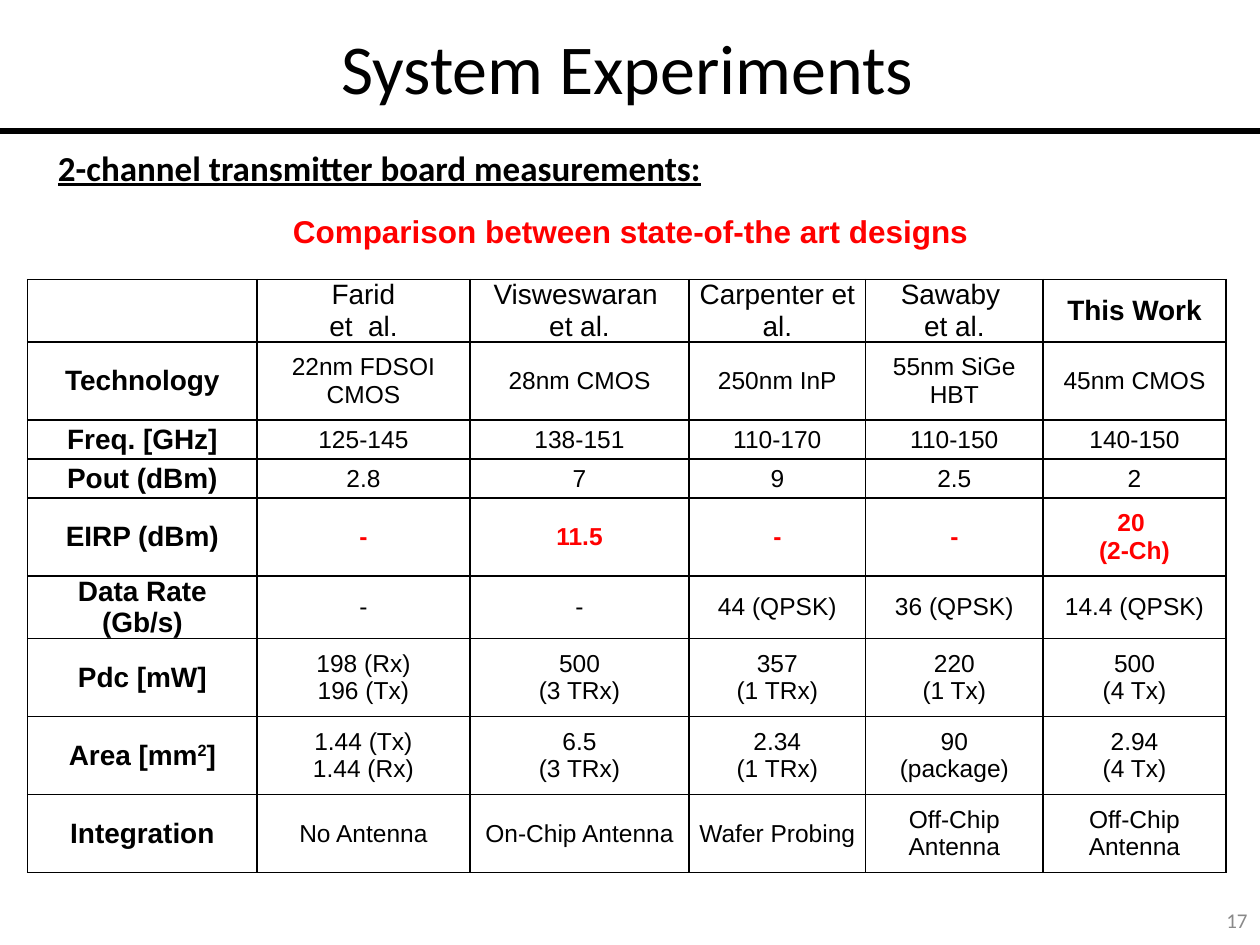
from dataclasses import dataclass

import pptx
import pptx.dml.color
import pptx.enum.shapes
import pptx.enum.text
import pptx.oxml.ns
import pptx.util
from lxml import etree

Inches = pptx.util.Inches
Pt = pptx.util.Pt
RGB = pptx.dml.color.RGBColor
ALIGN = pptx.enum.text.PP_ALIGN
MIDDLE = pptx.enum.text.MSO_ANCHOR.MIDDLE
qn = pptx.oxml.ns.qn


@dataclass(frozen=True)
class Theme:
    ink: RGB = RGB(0, 0, 0)
    accent: RGB = RGB(255, 0, 0)
    muted: RGB = RGB(0x89, 0x89, 0x89)
    heading_font: str = "Calibri"
    table_font: str = "Arial"
    title_size: int = 40
    section_size: int = 20
    caption_size: int = 18
    label_size: int = 16
    value_size: int = 14
    number_size: int = 12
    rule_width: int = 3
    border_width: int = 1


THEME = Theme()

COLUMN_WIDTHS = [1.82, 1.69, 1.74, 1.4, 1.41, 1.45]
ROW_HEIGHTS = [0.49, 0.62, 0.31, 0.31, 0.62, 0.49, 0.62, 0.62, 0.62]
EMPHASIS_ROW = "EIRP (dBm)"
DESIGNS = [
    ["", "Farid\net  al.", "Visweswaran \net al.", "Carpenter et al.", "Sawaby \net al.", "This Work"],
    ["Technology", "22nm FDSOI CMOS", "28nm CMOS", "250nm InP", "55nm SiGe HBT", "45nm CMOS"],
    ["Freq. [GHz]", "125-145", "138-151", "110-170", "110-150", "140-150"],
    ["Pout (dBm)", "2.8", "7", "9", "2.5", "2"],
    [EMPHASIS_ROW, "-", "11.5", "-", "-", "20 \n(2-Ch)"],
    ["Data Rate (Gb/s)", "-", "-", "44 (QPSK)", "36 (QPSK)", "14.4 (QPSK)"],
    ["Pdc [mW]", "198 (Rx)\n196 (Tx)", "500\n(3 TRx)", "357\n(1 TRx)", "220\n(1 Tx)", "500\n(4 Tx)"],
    ["Area [mm^2^]", "1.44 (Tx)\n1.44 (Rx)", "6.5\n(3 TRx)", "2.34\n(1 TRx)", "90\n(package)", "2.94\n(4 Tx)"],
    ["Integration", "No Antenna", "On-Chip Antenna", "Wafer Probing", "Off-Chip Antenna", "Off-Chip Antenna"],
]


def place(shape, box):
    shape.left, shape.top, shape.width, shape.height = map(Inches, box)


def style(font, name, size, color, bold=False):
    font.name = name
    font.size = Pt(size)
    font.color.rgb = color
    font.bold = bold


def write_line(shape, text, align, name, size, color, bold=False):
    frame = shape.text_frame
    frame.text = text
    frame.word_wrap = True
    frame.auto_size = pptx.enum.text.MSO_AUTO_SIZE.NONE
    para = frame.paragraphs[0]
    para.alignment = align
    para.space_before = Pt(0)
    span = para.runs[0]
    style(span.font, name, size, color, bold)
    return para, span


def add_title(page, box, text):
    title = page.shapes.title
    place(title, box)
    write_line(title, text, ALIGN.CENTER, THEME.heading_font, THEME.title_size, THEME.ink)
    title.text_frame.vertical_anchor = MIDDLE


def add_rule(page, left, top, width):
    rule = page.shapes.add_connector(
        pptx.enum.shapes.MSO_CONNECTOR.STRAIGHT,
        Inches(left), Inches(top), Inches(left + width), Inches(top))
    rule.line.color.rgb = THEME.ink
    rule.line.width = Pt(THEME.rule_width)
    etree.SubElement(rule._element.spPr, qn("a:effectLst"))


def add_section(page, box, text):
    body = page.placeholders[1]
    place(body, box)
    para, span = write_line(body, text, ALIGN.LEFT, THEME.heading_font,
                            THEME.section_size, THEME.ink, True)
    span.font.underline = True
    properties = para._p.get_or_add_pPr()
    properties.set("marL", "0")
    properties.set("indent", "0")
    etree.SubElement(properties, qn("a:buNone"))


def add_label(page, box, text, align, name, size, color, bold=False):
    label = page.shapes.add_textbox(*map(Inches, box))
    para, span = write_line(label, text, align, name, size, color, bold)
    label.text_frame.vertical_anchor = MIDDLE


def add_borders(cell):
    properties = cell._tc.get_or_add_tcPr()
    for side in ("lnL", "lnR", "lnT", "lnB"):
        line = etree.SubElement(properties, qn(f"a:{side}"), w=str(Pt(THEME.border_width)))
        fill = etree.SubElement(line, qn("a:solidFill"))
        etree.SubElement(fill, qn("a:srgbClr"), val=str(THEME.ink))


def fill_cell(cell, text, size, color, bold):
    add_borders(cell)
    cell.fill.background()
    cell.vertical_anchor = MIDDLE
    cell.margin_left = cell.margin_right = Inches(0.07)
    cell.margin_top = cell.margin_bottom = 0
    if not text:
        return
    cell.text_frame.text = text.replace("^", "")
    for para, line in zip(cell.text_frame.paragraphs, text.split("\n")):
        para.alignment = ALIGN.CENTER
        para.text = ""
        for index, part in enumerate(line.split("^")):
            span = para.add_run()
            span.text = part
            style(span.font, THEME.table_font, size, color, bold)
            if index % 2:
                span.font._element.set("baseline", "30000")


def add_comparison(page, left, top):
    frame = page.shapes.add_table(
        len(ROW_HEIGHTS), len(COLUMN_WIDTHS), Inches(left), Inches(top),
        Inches(sum(COLUMN_WIDTHS)), Inches(sum(ROW_HEIGHTS)))
    table = frame.table
    table.first_row = table.horz_banding = False
    for column, width in zip(table.columns, COLUMN_WIDTHS):
        column.width = Inches(width)
    last = len(COLUMN_WIDTHS) - 1
    for row_index, (row, height, texts) in enumerate(zip(table.rows, ROW_HEIGHTS, DESIGNS)):
        row.height = Inches(height)
        for column_index, (cell, text) in enumerate(zip(row.cells, texts)):
            header = row_index == 0
            label = column_index == 0
            emphasis = texts[0] == EMPHASIS_ROW
            size = THEME.label_size if header or label else THEME.value_size
            color = THEME.accent if emphasis and not label else THEME.ink
            bold = label or emphasis or (header and column_index == last)
            fill_cell(cell, text, size, color, bold)


def main():
    deck = pptx.Presentation()
    deck.slide_width, deck.slide_height = Inches(10), Inches(7.5)
    page = deck.slides.add_slide(deck.slide_layouts[1])
    add_rule(page, 0, 1.04, 10)
    add_title(page, (0.28, 0.18, 9.4, 0.7), "System Experiments")
    add_label(page, (9.25, 7.1, 0.75, 0.4), "17", ALIGN.RIGHT,
              THEME.heading_font, THEME.number_size, THEME.muted)
    add_section(page, (0.36, 1.11, 8.44, 0.6), "2-channel transmitter board measurements:")
    add_comparison(page, 0.22, 2.22)
    add_label(page, (2.07, 1.63, 5.87, 0.4), "Comparison between state-of-the art designs",
              ALIGN.CENTER, THEME.table_font, THEME.caption_size, THEME.accent, True)
    deck.save("out.pptx")


if __name__ == "__main__":
    main()
